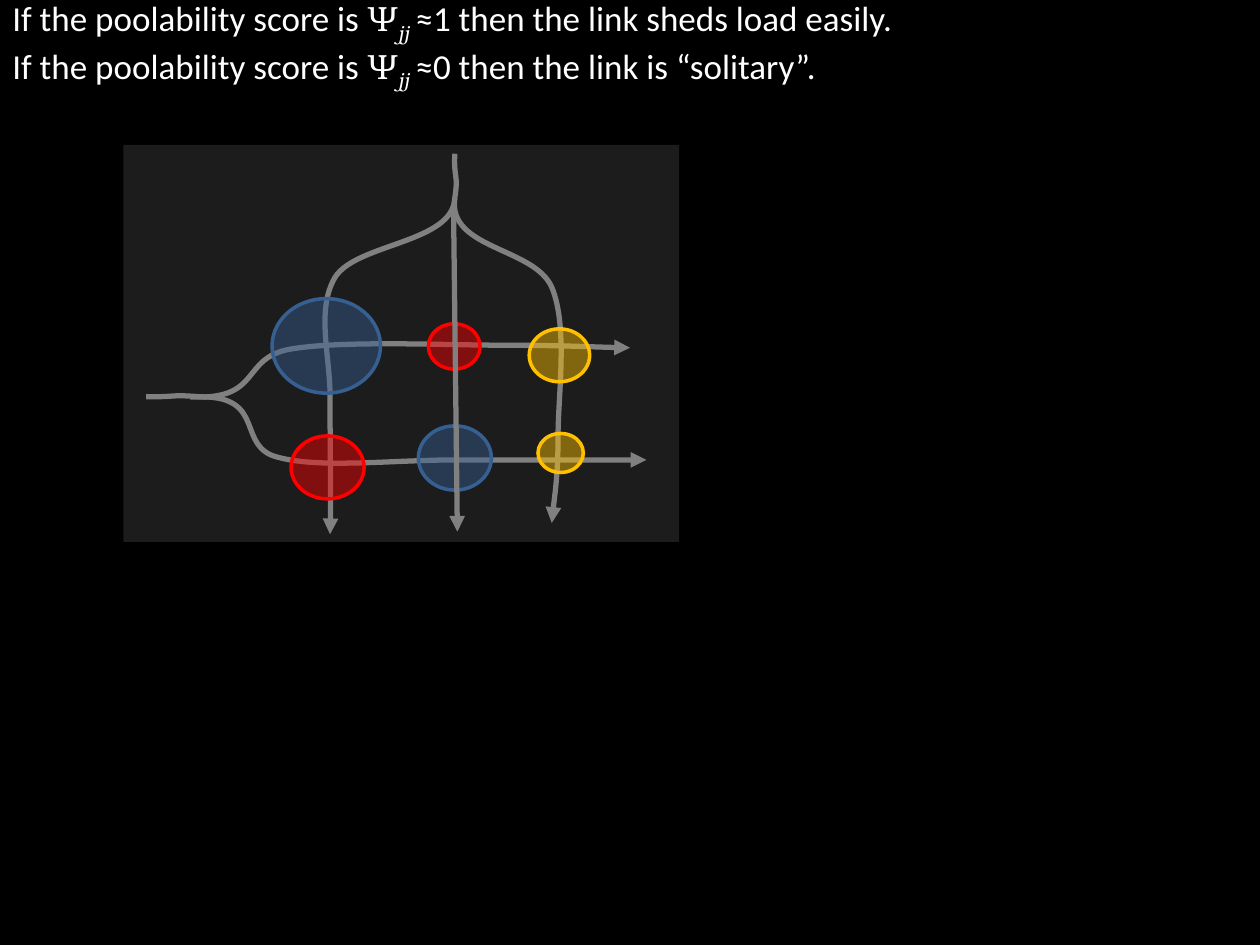
from dataclasses import dataclass

from pptx import Presentation
from pptx.dml.color import RGBColor
from pptx.enum.shapes import MSO_CONNECTOR, MSO_SHAPE
from pptx.enum.text import MSO_ANCHOR, PP_ALIGN
from pptx.oxml.ns import qn
from pptx.util import Inches, Pt
from lxml import etree

RECT, OVAL = MSO_SHAPE.RECTANGLE, MSO_SHAPE.OVAL
STRAIGHT = MSO_CONNECTOR.STRAIGHT
MIDDLE, LEFT = MSO_ANCHOR.MIDDLE, PP_ALIGN.LEFT


@dataclass(frozen=True)
class Theme:
    back: str = "000000"
    panel: str = "1C1C1C"
    text: str = "FFFFFF"
    flow: str = "808080"
    blue: str = "376092"
    red: str = "FF0000"
    gold: str = "FFC000"
    font: str = "Calibri"
    math: str = "TeX Gyre Bonum"
    size: int = 20
    thick: int = 3
    thin: int = 2
    alpha: int = 45


def color(code):
    return RGBColor.from_string(code)


class Board:
    def __init__(self, slide, theme):
        self.slide, self.theme = slide, theme
        fill = slide.background.fill
        fill.solid()
        fill.fore_color.rgb = color(theme.back)
        self.group = slide.shapes.add_group_shape().shapes

    def title(self, lines):
        """Write lines of (text, style) runs; style is text, math or sub."""
        box = self.slide.shapes.add_textbox(0, 0, Inches(10), Inches(0.7))
        frame = box.text_frame
        frame.word_wrap = True
        frame.vertical_anchor = MIDDLE
        para = frame.paragraphs[0]
        para.alignment = LEFT
        para.font.size = Pt(self.theme.size)
        para.font.color.rgb = color(self.theme.text)
        for row, line in enumerate(lines):
            if row:
                para.add_line_break()
            for text, style in line:
                run = para.add_run()
                run.text = text
                font = run.font
                font.size = Pt(self.theme.size)
                font.color.rgb = color(self.theme.text)
                font.name = self.theme.font if style == "text" else self.theme.math
                if style == "sub":
                    font.italic = True
                    font._element.set("baseline", "-25000")

    def shape(self, kind, box, fill):
        item = self.group.add_shape(kind, *map(Inches, box))
        item.shadow.inherit = False
        item.fill.solid()
        item.fill.fore_color.rgb = color(fill)
        item.line.fill.background()
        return item

    def node(self, box, tint):
        """Draw a see-through disc with a solid rim."""
        item = self.shape(OVAL, box, tint)
        item.line.color.rgb = color(tint)
        item.line.width = Pt(self.theme.thin)
        rgb = item.fill._xPr.find(qn("a:solidFill"))[0]
        etree.SubElement(rgb, qn("a:alpha"), val=str(self.theme.alpha * 1000))

    def arrow(self, item):
        item.line.color.rgb = color(self.theme.flow)
        item.line.width = Pt(self.theme.thick)
        etree.SubElement(item.line._get_or_add_ln(), qn("a:tailEnd"), type="triangle")

    def curve(self, points):
        """Draw a cubic curve: a start, then two controls and an end per piece."""
        first, *rest = [(Inches(x), Inches(y)) for x, y in points]
        pen = self.group.build_freeform(*first)
        pen.add_line_segments(rest, close=False)
        item = pen.convert_to_shape()
        item.shadow.inherit = False
        item.fill.background()
        # Each three line steps become one cubic piece
        steps = item._element.xpath(".//a:lnTo")
        for at in range(0, len(steps), 3):
            piece = steps[at]
            piece.tag = qn("a:cubicBezTo")
            for step in steps[at + 1:at + 3]:
                piece.append(step[0])
                step.getparent().remove(step)
        self.arrow(item)

    def line(self, start, end):
        item = self.group.add_connector(STRAIGHT, *map(Inches, start + end))
        etree.SubElement(item._element.spPr, qn("a:effectLst"))
        self.arrow(item)


def main():
    deck = Presentation()
    deck.slide_width, deck.slide_height = Inches(10), Inches(7.5)
    theme = Theme()
    board = Board(deck.slides.add_slide(deck.slide_layouts[6]), theme)

    # Heading
    ends = ("≈1 then the link sheds load easily.", "≈0 then the link is “solitary”.")
    board.title([
        [("If the poolability score is ", "text"), ("Ψ", "math"),
         ("jj ", "sub"), (end, "text")]
        for end in ends
    ])

    # Panel
    board.shape(RECT, (0.98, 1.15, 4.41, 3.15), theme.panel)

    # Flows: two from the top, two from the left
    flows = [
        [(3.61, 1.22), (3.6, 1.42), (3.64, 1.38), (3.61, 1.57),
         (3.6, 1.93), (2.83, 1.93), (2.66, 2.2),
         (2.5, 2.47), (2.63, 2.85), (2.62, 3.19),
         (2.62, 3.53), (2.63, 4.07), (2.62, 4.24)],
        [(3.61, 1.57), (3.55, 1.98), (4.24, 1.96), (4.38, 2.28),
         (4.51, 2.59), (4.43, 3.14), (4.43, 3.45),
         (4.43, 3.76), (4.39, 4.03), (4.38, 4.15)],
        [(1.16, 3.15), (1.44, 3.15), (1.33, 3.13), (1.6, 3.15),
         (2.12, 3.15), (1.87, 3.55), (2.21, 3.63),
         (2.54, 3.72), (3.13, 3.65), (3.62, 3.65),
         (4.11, 3.65), (4.87, 3.65), (5.13, 3.65)],
        [(1.51, 3.15), (2.09, 3.18), (1.9, 2.84), (2.31, 2.77),
         (2.73, 2.7), (3.54, 2.74), (3.99, 2.74),
         (4.44, 2.74), (4.83, 2.76), (5, 2.76)],
    ]
    for flow in flows:
        board.curve(flow)

    # Links where the flows cross
    nodes = [
        ((2.16, 2.37, 0.86, 0.75), theme.blue),
        ((3.4, 2.57, 0.41, 0.36), theme.red),
        ((3.32, 3.38, 0.58, 0.51), theme.blue),
        ((2.31, 3.46, 0.58, 0.5), theme.red),
        ((4.2, 2.61, 0.48, 0.42), theme.gold),
        ((4.27, 3.44, 0.36, 0.31), theme.gold),
    ]
    for box, tint in nodes:
        board.node(box, tint)

    # Middle flow
    board.line((3.6, 1.7), (3.63, 4.22))

    deck.save("out.pptx")


if __name__ == "__main__":
    main()
